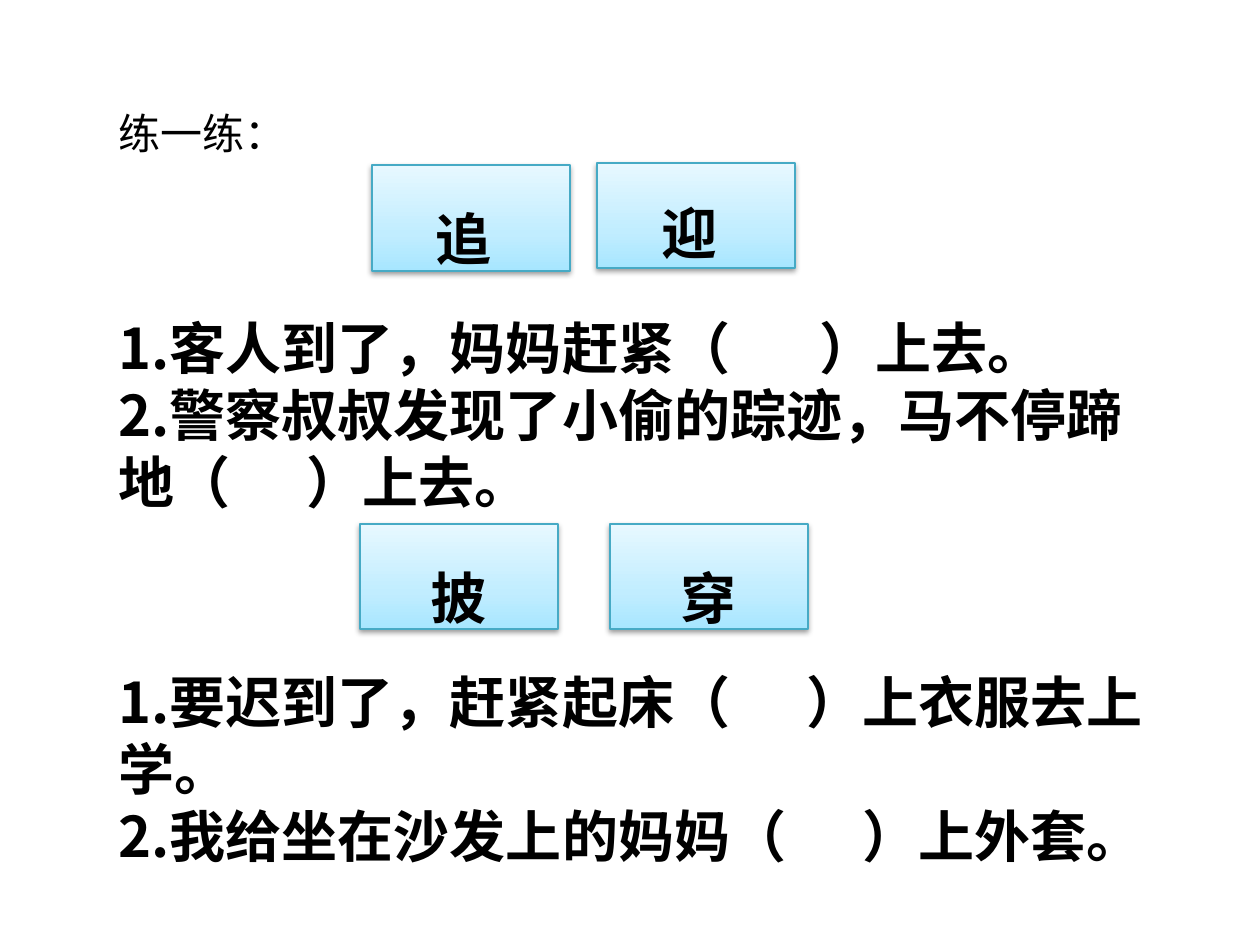
from copy import deepcopy

from lxml import etree
from pptx import Presentation
from pptx.dml.color import RGBColor
from pptx.enum.shapes import MSO_SHAPE
from pptx.enum.text import MSO_ANCHOR, MSO_AUTO_SIZE, PP_ALIGN
from pptx.oxml.ns import qn
from pptx.util import Emu, Pt

RECTANGLE = MSO_SHAPE.RECTANGLE
TOP, MIDDLE = MSO_ANCHOR.TOP, MSO_ANCHOR.MIDDLE
LEFT, CENTER = PP_ALIGN.LEFT, PP_ALIGN.CENTER
GROW, FIXED = MSO_AUTO_SIZE.SHAPE_TO_FIT_TEXT, MSO_AUTO_SIZE.NONE
TWO_CONTENT_LAYOUT = 3
EMU_PER_PX = 914400 / 126


def px(length):
    return Emu(round(length * EMU_PER_PX))


def color(hex_string):
    return RGBColor.from_string(hex_string)


def set_values(target, values):
    for name, value in values.items():
        setattr(target, name, value)


class ExerciseSlide:
    """Holds the style of the exercise and the slide being filled."""

    CJK_FONT = "Noto Sans CJK SC"
    HEADING = {"name": "Arial", "size": Pt(24), "bold": False}
    STRONG = {"name": CJK_FONT, "size": Pt(32), "bold": True}
    INK = "000000"
    CARD_LINE = "46AAC5"
    CARD_STOPS = ((0, "A7E6FF"), (0.35, "C1EDFF"), (1, "E7F8FF"))

    def __init__(self, slide):
        self.slide = slide

    def place(self, shape, left, top, width, height):
        set_values(shape, {"left": px(left), "top": px(top),
                           "width": px(width), "height": px(height)})

    def fill_text(self, shape, lines, font, anchor=TOP, auto_size=GROW, **paragraph_format):
        frame = shape.text_frame
        set_values(frame, {"word_wrap": True, "vertical_anchor": anchor,
                           "auto_size": auto_size})
        frame.text = "\n".join(lines)
        for paragraph in frame.paragraphs:
            properties = paragraph._p.get_or_add_pPr()
            set_values(paragraph, {"space_before": Pt(0), **paragraph_format})
            properties.set("marL", "0")
            properties.set("indent", "0")
            etree.SubElement(properties, qn("a:buNone"))
            for run in paragraph.runs:
                set_values(run.font, font)
                run.font.color.rgb = color(self.INK)
                east_asian = etree.Element(qn("a:ea"), typeface=self.CJK_FONT)
                run._r.rPr.find(qn("a:latin")).addnext(east_asian)

    def title(self, text, box):
        shape = self.slide.shapes.title
        self.place(shape, *box)
        self.fill_text(shape, [text], self.HEADING, alignment=LEFT, line_spacing=1.5)

    def sentences(self, index, lines, box):
        shape = self.slide.placeholders[index]
        self.place(shape, *box)
        self.fill_text(shape, lines, self.STRONG, alignment=LEFT, line_spacing=1.0)

    def card(self, word, box, inset=None, anchor=TOP, auto_size=GROW):
        """Draw a word card; the word is centred unless a left inset is given."""
        shape = self.slide.shapes.add_shape(RECTANGLE, *map(px, box))
        shape.line.color.rgb = color(self.CARD_LINE)
        shape.line.width = Pt(0.75)
        self.fill_gradient(shape)
        self.add_shadow(shape)
        if inset is not None:
            shape.text_frame.margin_left = px(inset)
        self.fill_text(shape, [word], self.STRONG, anchor, auto_size, line_spacing=1.5,
                       alignment=CENTER if inset is None else LEFT)

    def fill_gradient(self, shape):
        shape.fill.gradient()
        shape.fill.gradient_angle = 90
        first_stop = shape._element.spPr.find(".//" + qn("a:gs"))
        first_stop.addnext(deepcopy(first_stop))
        for stop, (position, hex_string) in zip(shape.fill.gradient_stops, self.CARD_STOPS):
            stop.position = position
            stop.color.rgb = color(hex_string)

    def add_shadow(self, shape):
        shape.shadow.inherit = False
        effects = shape._element.spPr.find(qn("a:effectLst"))
        shadow = etree.SubElement(effects, qn("a:outerShdw"), blurRad=str(Pt(3.1)),
                                  dist=str(Pt(1.6)), dir="5400000", rotWithShape="0")
        shade = etree.SubElement(shadow, qn("a:srgbClr"), val=self.INK)
        etree.SubElement(shade, qn("a:alpha"), val="38000")


def main():
    presentation = Presentation()
    presentation.slide_width, presentation.slide_height = px(1260), px(945)
    layout = presentation.slide_layouts[TWO_CONTENT_LAYOUT]
    exercise = ExerciseSlide(presentation.slides.add_slide(layout))

    exercise.title("练一练：", (106, 76, 973, 79))
    exercise.card("追", (372, 165, 198, 106), inset=64)
    exercise.card("迎", (597, 163, 198, 105), inset=64, anchor=MIDDLE, auto_size=FIXED)
    exercise.sentences(1, [
        "1.客人到了，妈妈赶紧（       ）上去。",
        "2.警察叔叔发现了小偷的踪迹，马不停蹄地（      ）上去。",
    ], (106, 307, 1060, 217))
    for word, left in (("披", 360), ("穿", 610)):
        exercise.card(word, (left, 524, 198, 105))
    exercise.sentences(2, [
        "1.要迟到了，赶紧起床（      ）上衣服去上学。",
        "2.我给坐在沙发上的妈妈（      ）上外套。",
    ], (106, 661, 1100, 217))

    presentation.save("out.pptx")


if __name__ == "__main__":
    main()
